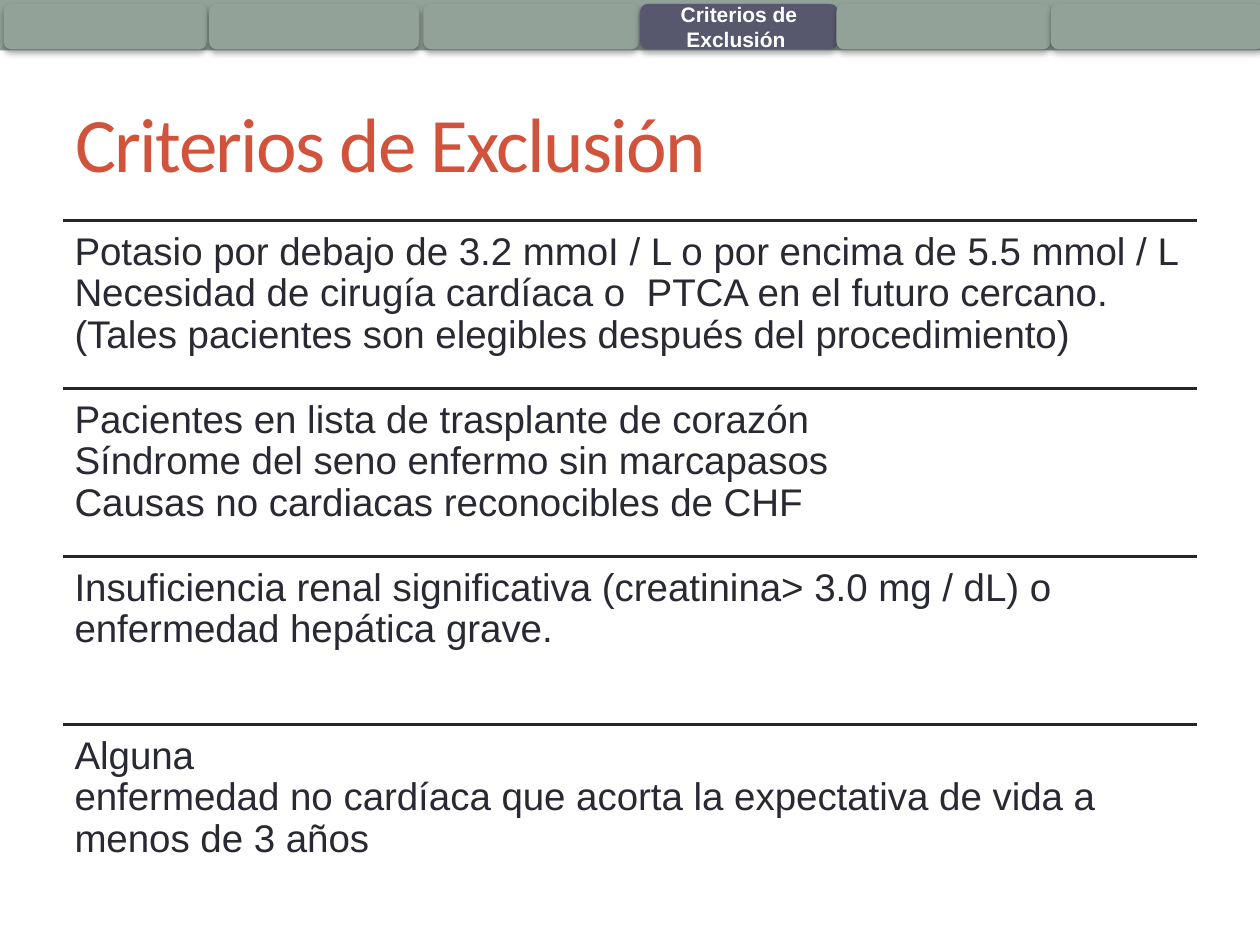
from lxml import etree
from pptx import Presentation
from pptx import util as u
from pptx.dml.color import RGBColor
from pptx.enum import shapes, text
from pptx.oxml.ns import qn

SAGE = RGBColor(0x93, 0xA2, 0x99)
SLATE = RGBColor(0x57, 0x57, 0x6E)
RED = RGBColor(0xD2, 0x53, 0x3C)
INK = RGBColor(0x29, 0x29, 0x34)
RULE = RGBColor(0x25, 0x25, 0x2F)
WHITE = RGBColor(0xFF, 0xFF, 0xFF)

LEFT, WIDTH = 36, 648
FIRST_RULE, ROW_HEIGHT = 126, 96

CRITERIA = [
    "Potasio por debajo de 3.2 mmoI / L o por encima de 5.5 mmol / L\n"
    "Necesidad de cirugía cardíaca o  PTCA en el futuro cercano. "
    "(Tales pacientes son elegibles después del procedimiento)",
    "Pacientes en lista de trasplante de corazón\n"
    "Síndrome del seno enfermo sin marcapasos\n"
    "Causas no cardiacas reconocibles de CHF",
    "Insuficiencia renal significativa (creatinina> 3.0 mg / dL) o "
    "enfermedad hepática grave.",
    "Alguna\nenfermedad no cardíaca que acorta la expectativa de vida a "
    "menos de 3 años",
]

# Left edge and width of each navigation tab
TABS = [(2.2, 116), (119.5, 120), (242, 123), (365.8, 113), (478, 122.4), (600.5, 121.7)]
CURRENT_TAB = 3


def add_shadow(effects):
    """Fill an a:effectLst with a soft shadow that falls straight down."""
    shadow = etree.SubElement(effects, qn("a:outerShdw"), blurRad=str(u.Pt(3.5)),
                              dist=str(u.Pt(2.2)), dir="5400000", rotWithShape="0")
    black = etree.SubElement(shadow, qn("a:srgbClr"), val="000000")
    etree.SubElement(black, qn("a:alpha"), val="32000")


def write(frame, words, *, size, color, font="Arial", bold=False, inset=7.2,
          align=text.PP_ALIGN.LEFT, anchor=text.MSO_ANCHOR.TOP, line_spacing=1.0):
    """Put words in a text frame; a newline becomes a line break."""
    frame.word_wrap = True
    frame.vertical_anchor = anchor
    frame.margin_left = frame.margin_right = u.Pt(inset)
    paragraph = frame.paragraphs[0]
    paragraph.text = words.replace("\n", "\v")
    paragraph.alignment = align
    paragraph.line_spacing = line_spacing
    for run in paragraph.runs:
        run.font.name = font
        run.font.size = u.Pt(size)
        run.font.bold = bold
        run.font.color.rgb = color
    return paragraph


def add_box(slide, kind, left, top, width, height, fill):
    box = slide.shapes.add_shape(kind, u.Pt(left), u.Pt(top), u.Pt(width), u.Pt(height))
    box.shadow.inherit = False
    box.fill.solid()
    box.fill.fore_color.rgb = fill
    box.line.fill.background()
    return box


def add_tab(slide, left, width, fill):
    tab = add_box(slide, shapes.MSO_SHAPE.ROUNDED_RECTANGLE, left, 2.2, width, 26, fill)
    add_shadow(tab.element.spPr.find(qn("a:effectLst")))
    return tab


def add_title(slide, words):
    title = slide.shapes.add_textbox(u.Pt(LEFT), u.Pt(42), u.Pt(WIDTH), u.Pt(78))
    heading = write(title.text_frame, words, size=44, color=RED, font="Calibri",
                    anchor=text.MSO_ANCHOR.MIDDLE)
    for props in heading._p.iter(qn("a:rPr")):
        props.set("spc", "-100")
        effects = etree.Element(qn("a:effectLst"))
        props.find(qn("a:solidFill")).addnext(effects)
        add_shadow(effects)


def add_rule(slide, top):
    rule = slide.shapes.add_connector(shapes.MSO_CONNECTOR.STRAIGHT, u.Pt(LEFT), u.Pt(top),
                                      u.Pt(LEFT + WIDTH), u.Pt(top))
    rule.line.color.rgb = RULE
    rule.line.width = u.Pt(2.08)
    etree.SubElement(rule.element.spPr, qn("a:effectLst"))


def add_criterion(slide, top, words):
    add_rule(slide, top)
    criterion = slide.shapes.add_textbox(u.Pt(LEFT), u.Pt(top), u.Pt(WIDTH), u.Pt(ROW_HEIGHT))
    criterion.text_frame.margin_top = criterion.text_frame.margin_bottom = u.Pt(6.6)
    write(criterion.text_frame, words, size=22, color=INK, inset=6.6, line_spacing=0.9)


def main():
    deck = Presentation()
    deck.slide_width, deck.slide_height = u.Pt(720), u.Pt(540)
    slide = deck.slides.add_slide(deck.slide_layouts[6])

    # Top band and title
    add_box(slide, shapes.MSO_SHAPE.RECTANGLE, 0, 0, 720, 28.8, SAGE)
    add_title(slide, "Criterios de Exclusión")

    # Ruled list of criteria
    for row, words in enumerate(CRITERIA):
        add_criterion(slide, FIRST_RULE + row * ROW_HEIGHT, words)

    # Navigation tabs, with the current section named
    for index, (left, width) in enumerate(TABS):
        current = index == CURRENT_TAB
        tab = add_tab(slide, left, width, SLATE if current else SAGE)
        if current:
            write(tab.text_frame, "Criterios de Exclusión ", size=12, color=WHITE, bold=True,
                  align=text.PP_ALIGN.CENTER, anchor=text.MSO_ANCHOR.MIDDLE)

    deck.save("out.pptx")


if __name__ == "__main__":
    main()
